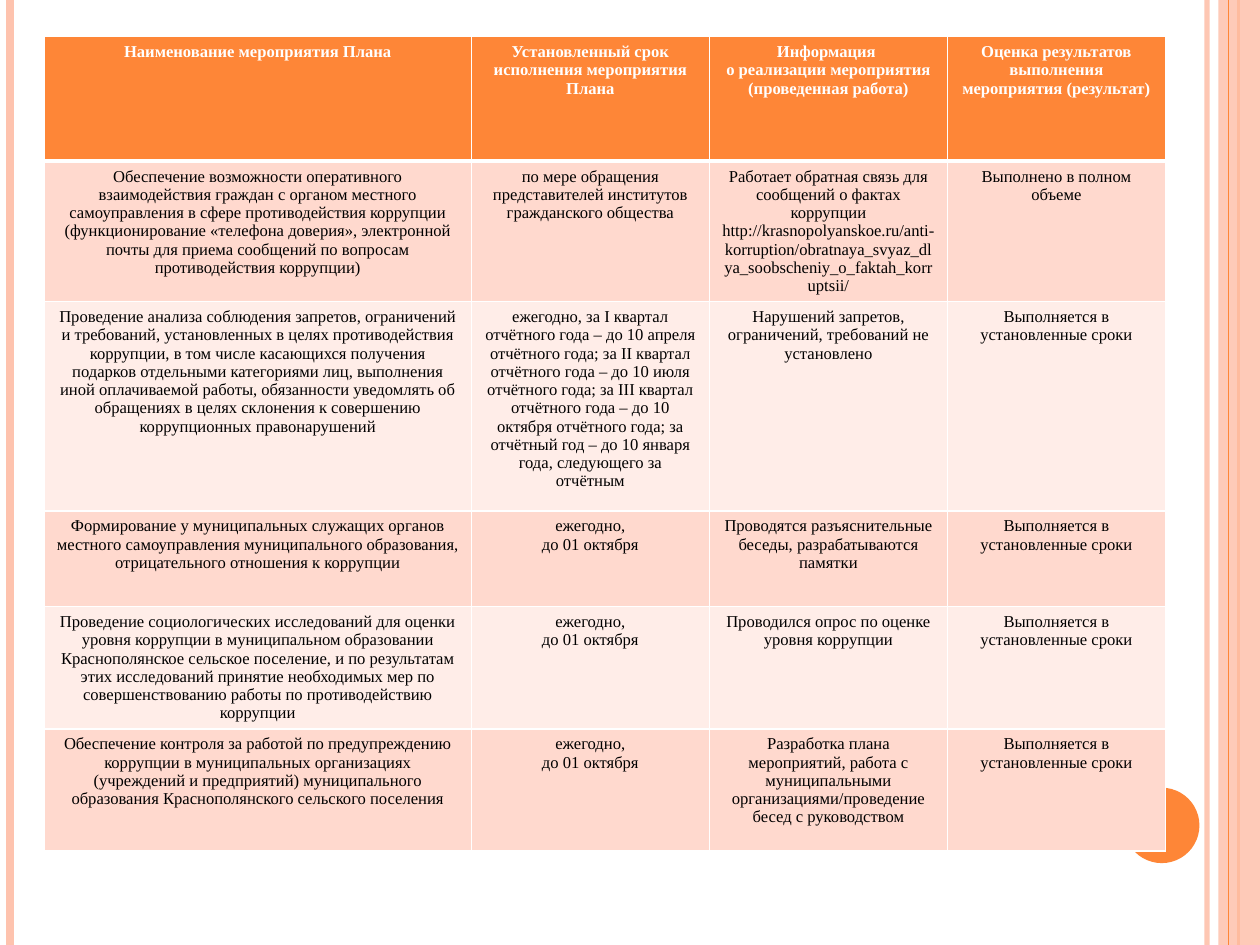
from lxml import etree
from pptx import Presentation
from pptx.dml.color import RGBColor
from pptx.enum.shapes import MSO_CONNECTOR, MSO_SHAPE
from pptx.enum.text import PP_ALIGN
from pptx.oxml.ns import qn
from pptx.util import Cm, Pt

STRAIGHT = MSO_CONNECTOR.STRAIGHT
RECTANGLE, OVAL = MSO_SHAPE.RECTANGLE, MSO_SHAPE.OVAL
CENTER = PP_ALIGN.CENTER

SLIDE_W, SLIDE_H = 25.4, 19.05
ORANGE, PEACH, WHITE, BLACK = "FE8637", "FEC3AE", "FFFFFF", "000000"
BANDS = ("FFD9CE", "FFEDE8")
FONT, TEXT_SIZE = "Times New Roman", 9.5

COLUMNS = (8.61, 4.8, 4.8, 4.39)
ROW_HEIGHTS = (2.51, 2.46, 4.22, 1.93, 2.46, 2.46)
BY_OCTOBER = "ежегодно,\nдо 01 октября"
ON_TIME = "Выполняется в установленные сроки"
PLAN = (
    ("Наименование мероприятия Плана",
     "Установленный срок исполнения мероприятия Плана",
     "Информация \vо реализации мероприятия (проведенная работа)",
     "Оценка результатов выполнения мероприятия (результат)"),
    ("Обеспечение возможности оперативного взаимодействия граждан с органом местного "
     "самоуправления в сфере противодействия коррупции (функционирование «телефона "
     "доверия», электронной почты для приема сообщений по вопросам противодействия "
     "коррупции)",
     "по мере обращения представителей институтов гражданского общества",
     "Работает обратная связь для сообщений о фактах коррупции "
     "http://krasnopolyanskoe.ru/anti-korruption/"
     "obratnaya_svyaz_dlya_soobscheniy_o_faktah_korruptsii/",
     "Выполнено в полном объеме"),
    ("Проведение анализа соблюдения запретов, ограничений и требований, установленных "
     "в целях противодействия коррупции, в том числе касающихся получения подарков "
     "отдельными категориями лиц, выполнения иной оплачиваемой работы, обязанности "
     "уведомлять об обращениях в целях склонения к совершению коррупционных "
     "правонарушений",
     "ежегодно, за I квартал отчётного года – до 10 апреля отчётного года; "
     "за II квартал отчётного года – до 10 июля отчётного года; "
     "за III квартал отчётного года – до 10 октября отчётного года; "
     "за отчётный год – до 10 января года, следующего за отчётным",
     "Нарушений запретов, ограничений, требований не установлено",
     ON_TIME),
    ("Формирование у муниципальных служащих органов местного самоуправления "
     "муниципального образования, отрицательного отношения к коррупции",
     BY_OCTOBER,
     "Проводятся разъяснительные беседы, разрабатываются памятки",
     ON_TIME),
    ("Проведение социологических исследований для оценки уровня коррупции в "
     "муниципальном образовании Краснополянское сельское поселение, и по результатам "
     "этих исследований принятие необходимых мер по совершенствованию работы по "
     "противодействию коррупции",
     BY_OCTOBER,
     "Проводился опрос по оценке уровня коррупции",
     ON_TIME),
    ("Обеспечение контроля за работой по предупреждению коррупции в муниципальных "
     "организациях (учреждений и предприятий) муниципального образования "
     "Краснополянского сельского поселения",
     BY_OCTOBER,
     "Разработка плана мероприятий, работа с муниципальными "
     "организациями/проведение бесед с руководством",
     ON_TIME),
)


def paint(fill, color, opacity=100):
    """Give a fill a solid colour with an opacity in percent."""
    fill.solid()
    fill.fore_color.rgb = RGBColor.from_string(color)
    if opacity < 100:
        tint = fill._xPr.find(".//" + qn("a:srgbClr"))
        etree.SubElement(tint, qn("a:alpha"), val=str(opacity * 1000))


def add_stripe(slide, x, top, height, color, weight, opacity=100):
    """Draw a vertical line."""
    stripe = slide.shapes.add_connector(
        STRAIGHT, Cm(x), Cm(top), Cm(x), Cm(top + height))
    stripe.line.width = Pt(weight)
    paint(stripe.line.fill, color, opacity)
    etree.SubElement(stripe._element.spPr, qn("a:effectLst"))


def add_block(slide, kind, left, top, width, height, color, opacity=100):
    """Draw a filled shape without an outline."""
    block = slide.shapes.add_shape(kind, Cm(left), Cm(top), Cm(width), Cm(height))
    block.shadow.inherit = False
    block.line.fill.background()
    paint(block.fill, color, opacity)


def add_frame(slide, left, top, width, height):
    """Place the side stripes, the right band and the disc."""
    right = left + width
    add_stripe(slide, right - 1.07, top, height, PEACH, 3, 93)
    add_stripe(slide, left + 0.2, top, height, PEACH, 4.5)
    add_stripe(slide, right - 0.43, top, height, ORANGE, 1.5)
    add_block(slide, RECTANGLE, right - 0.84, top, 0.84, height, PEACH, 87)
    add_stripe(slide, right - 0.64, top, height, ORANGE, 0.75)
    add_block(slide, OVAL, right - 2.74, top + 15.88, 1.52, 1.52, ORANGE)


def set_borders(cell, bottom, top):
    """Outline a cell in white."""
    properties = cell._tc.get_or_add_tcPr()
    for side, weight in (("L", 1), ("R", 1), ("T", top), ("B", bottom)):
        edge = etree.SubElement(properties, qn("a:ln" + side), w=str(Pt(weight)))
        solid = etree.SubElement(edge, qn("a:solidFill"))
        etree.SubElement(solid, qn("a:srgbClr"), val=WHITE)


def write_cell(cell, wording, color, bold):
    """Fill a cell with centred text."""
    cell.text_frame.text = wording
    for paragraph in cell.text_frame.paragraphs:
        paragraph.alignment = CENTER
        for line_break in paragraph._p.findall(qn("a:br")):
            etree.SubElement(line_break, qn("a:rPr"), sz=str(int(TEXT_SIZE * 100)))
        for run in paragraph.runs:
            run.font.name = FONT
            run.font.size = Pt(TEXT_SIZE)
            run.font.bold = bold
            run.font.color.rgb = RGBColor.from_string(color)


def add_plan(slide, left, top):
    """Place the table of plan measures."""
    plan = slide.shapes.add_table(
        len(PLAN), len(COLUMNS), Cm(left), Cm(top),
        Cm(sum(COLUMNS)), Cm(sum(ROW_HEIGHTS))).table
    for column, width in zip(plan.columns, COLUMNS):
        column.width = Cm(width)
    for index, (row, height, measure) in enumerate(zip(plan.rows, ROW_HEIGHTS, PLAN)):
        row.height = Cm(height)
        header = index == 0
        for cell, wording in zip(row.cells, measure):
            write_cell(cell, wording, WHITE if header else BLACK, header)
            set_borders(cell, 3 if header else 1, 3 if index == 1 else 1)
            paint(cell.fill, ORANGE if header else BANDS[(index - 1) % 2])


def main():
    """Build and save the slide."""
    deck = Presentation()
    deck.slide_width, deck.slide_height = Cm(SLIDE_W), Cm(SLIDE_H)
    slide = deck.slides.add_slide(deck.slide_layouts[6])
    paint(slide.background.fill, WHITE)
    add_frame(slide, 0, 0, SLIDE_W, SLIDE_H)
    add_plan(slide, 0.89, 0.74)
    deck.save("out.pptx")


if __name__ == "__main__":
    main()
